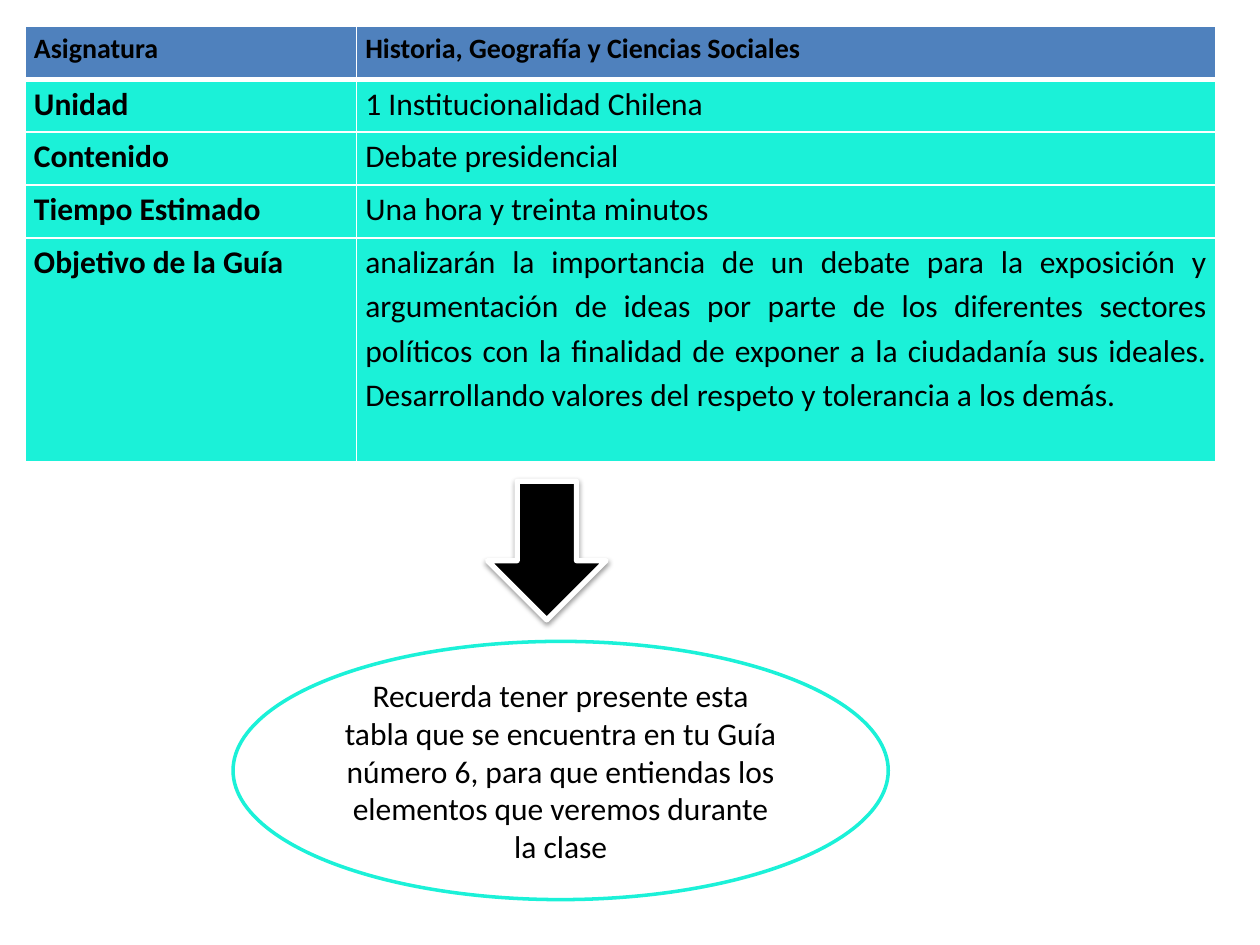
from lxml.etree import SubElement
from pptx import Presentation
from pptx.dml.color import RGBColor
from pptx.enum.shapes import MSO_SHAPE
from pptx.enum.text import MSO_ANCHOR, PP_ALIGN
from pptx.oxml import parse_xml
from pptx.oxml.ns import nsdecls, qn
from pptx.util import Inches, Pt

BLACK, WHITE, BLUE, TURQUOISE = "000000", "FFFFFF", "4F81BD", "1BF1D8"


def paint(target, color):
    target.solid()
    target.fore_color.rgb = RGBColor.from_string(color)


def write(frame, text, size=18, bold=False, align=PP_ALIGN.LEFT, spacing=None, after=None):
    frame.word_wrap = True
    para = frame.paragraphs[0]
    para.alignment = align
    para.line_spacing = spacing
    para.space_after = after
    span = para.add_run()
    span.text = text
    span.font.name = "Calibri"
    span.font.size = Pt(size)
    span.font.bold = bold
    paint(span.font.fill, BLACK)


deck = Presentation()
deck.slide_width, deck.slide_height = Inches(10), Inches(7.5)
page = deck.slides.add_slide(deck.slide_layouts[6])

guide_rows = [
    ("Asignatura", "Historia, Geografía y Ciencias Sociales"),
    ("Unidad", "1 Institucionalidad Chilena"),
    ("Contenido", "Debate presidencial"),
    ("Tiempo Estimado", "Una hora y treinta minutos"),
    ("Objetivo de la Guía",
     "analizarán la importancia de un debate para la exposición y argumentación de ideas "
     "por parte de los diferentes sectores políticos con la finalidad de exponer a la "
     "ciudadanía sus ideales. Desarrollando valores del respeto y tolerancia a los demás."),
]
table = page.shapes.add_table(
    len(guide_rows), 2, Inches(0.2), Inches(0.21), Inches(9.45), Inches(3.46)).table
for column, width in zip(table.columns, (2.63, 6.82)):
    column.width = Inches(width)
for row, height in zip(table.rows, (0.42, 0.42, 0.42, 0.42, 1.78)):
    row.height = Inches(height)

for row_index, texts in enumerate(guide_rows):
    header = row_index == 0
    for column_index, text in enumerate(texts):
        cell = table.cell(row_index, column_index)
        cell.margin_left = cell.margin_right = Inches(0.07)
        cell.margin_top = cell.margin_bottom = 0
        write(cell.text_frame, text, size=16 if header else 18,
              bold=header or column_index == 0,
              align=PP_ALIGN.LEFT if header else PP_ALIGN.JUSTIFY,
              spacing=1.15, after=Pt(10))
        properties = cell._tc.get_or_add_tcPr()
        for side in ("L", "R", "T", "B"):
            thick = (row_index, side) in ((0, "B"), (1, "T"))
            border = SubElement(properties, qn(f"a:ln{side}"), w=str(Pt(3 if thick else 1)))
            SubElement(SubElement(border, qn("a:solidFill")), qn("a:srgbClr"), val=WHITE)
        paint(cell.fill, BLUE if header else TURQUOISE)

arrow = page.shapes.add_shape(
    MSO_SHAPE.DOWN_ARROW, Inches(3.87), Inches(3.82), Inches(0.94), Inches(1.1))
reminder = page.shapes.add_shape(
    MSO_SHAPE.OVAL, Inches(1.85), Inches(5.09), Inches(5.2), Inches(2.05))
for shape, fill, line, width in ((arrow, BLACK, WHITE, 3), (reminder, WHITE, TURQUOISE, 2)):
    shape.shadow.inherit = False
    paint(shape.fill, fill)
    paint(shape.line.fill, line)
    shape.line.width = Pt(width)

arrow._element.spPr.find(qn("a:effectLst")).append(parse_xml(
    f'<a:outerShdw {nsdecls("a")} blurRad="{Pt(3.1)}" dist="{Pt(1.6)}" dir="5400000" '
    f'rotWithShape="0"><a:srgbClr val="{BLACK}"><a:alpha val="38000"/></a:srgbClr></a:outerShdw>'))

reminder.text_frame.vertical_anchor = MSO_ANCHOR.MIDDLE
write(reminder.text_frame,
      "Recuerda tener presente esta tabla que se encuentra en tu Guía número 6, "
      "para que entiendas los elementos que veremos durante la clase",
      align=PP_ALIGN.CENTER)

deck.save("out.pptx")
